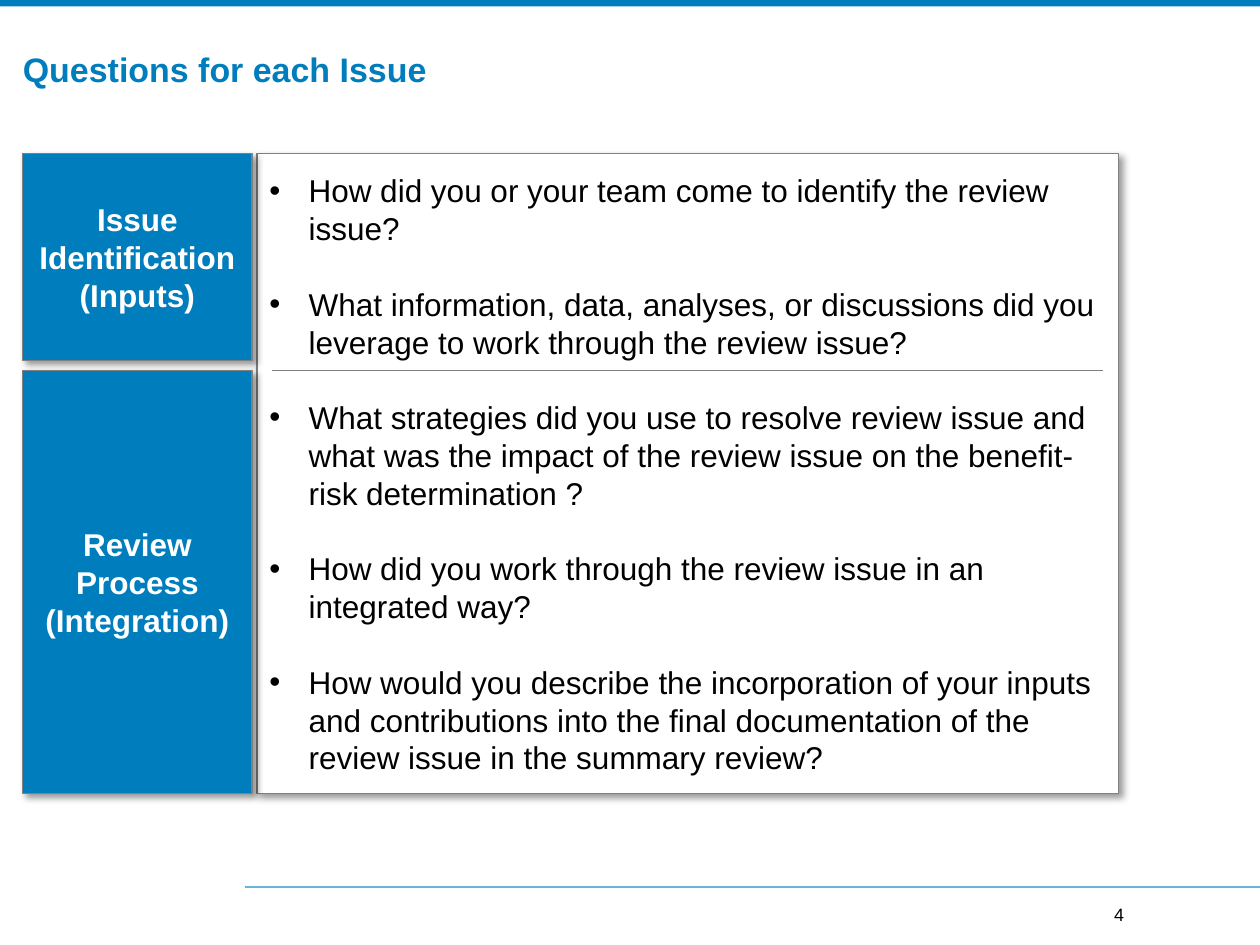
from dataclasses import dataclass

from lxml.etree import SubElement
from pptx import Presentation
from pptx.dml.color import RGBColor
from pptx.enum.shapes import MSO_CONNECTOR as Connector, MSO_SHAPE as Shape
from pptx.enum.text import MSO_ANCHOR as Anchor, MSO_AUTO_SIZE as AutoSize, PP_ALIGN as Align
from pptx.oxml.ns import qn
from pptx.util import Cm, Pt


@dataclass(frozen=True)
class Theme:
    font: str = "Arial"
    blue: str = "007DBC"
    pale_blue: str = "6BB4D8"
    gray: str = "808080"
    black: str = "000000"
    white: str = "FFFFFF"
    title_size: float = 19.4
    text_size: float = 18
    number_size: float = 10.2
    line_height: float = 21.6
    border: float = 0.75


THEME = Theme()
PAGE_WIDTH, PAGE_HEIGHT = 25.4, 19.05
LEFT, TOP, BOTTOM = 0.46, 3.1, 16
LABEL_WIDTH, PANEL_LEFT, PANEL_WIDTH = 4.62, 5.18, 17.37
DIVIDER_Y, LABEL_GAP, DIVIDER_INSET = 7.47, 0.2, 0.31

QUESTIONS = [
    "How did you or your team come to identify the review issue?",
    "What information, data, analyses, or discussions did you leverage to work through the review issue?",
    "What strategies did you use to resolve review issue and what was the impact of the review issue "
    "on the benefit-risk determination ?",
    "How did you work through the review issue in an integrated way?",
    "How would you describe the incorporation of your inputs and contributions into the final "
    "documentation of the review issue in the summary review?",
]


def color(value):
    return RGBColor.from_string(value)


def place(box, left, top, width, height):
    box.left, box.top, box.width, box.height = Cm(left), Cm(top), Cm(width), Cm(height)


def add_bullet(para, indent=0.79):
    properties = para._p.get_or_add_pPr()
    properties.set("marL", str(Cm(indent)))
    properties.set("indent", str(-Cm(indent)))
    SubElement(properties, qn("a:buFont"), typeface=THEME.font)
    SubElement(properties, qn("a:buChar"), char="•")


def write_text(box, paragraphs, size=THEME.text_size, ink=THEME.black, bold=False,
               align=Align.LEFT, margins=(0.25, 0.13), bullets=False, gap=0, leading=None):
    frame = box.text_frame
    frame.word_wrap = True
    frame.auto_size = AutoSize.NONE
    frame.vertical_anchor = Anchor.MIDDLE
    frame.margin_left = frame.margin_right = Cm(margins[0])
    frame.margin_top = frame.margin_bottom = Cm(margins[1])
    for index, text in enumerate(paragraphs):
        para = frame.add_paragraph() if index else frame.paragraphs[0]
        if bullets:
            add_bullet(para)
        para.alignment = align
        para.space_before = Pt(gap if index else 0)
        para.space_after = Pt(0)
        if leading:
            para.line_spacing = Pt(leading)
        span = para.add_run()
        span.text = text
        span.font.name = THEME.font
        span.font.size = Pt(size)
        span.font.bold = bold
        span.font.color.rgb = color(ink)


def fill_panel(box, fill):
    box.fill.solid()
    box.fill.fore_color.rgb = color(fill)
    box.line.color.rgb = color(THEME.gray)
    box.line.width = Pt(THEME.border)
    effects = SubElement(box._element.spPr, qn("a:effectLst"))
    shadow = SubElement(effects, qn("a:outerShdw"), blurRad=str(Pt(4)), dist=str(Pt(3)),
                        dir=str(45 * 60000), algn="tl", rotWithShape="0")
    tint = SubElement(shadow, qn("a:srgbClr"), val=THEME.black)
    SubElement(tint, qn("a:alpha"), val="40000")


def add_rectangle(page, left, top, width, height):
    return page.shapes.add_shape(Shape.RECTANGLE, Cm(left), Cm(top), Cm(width), Cm(height))


def add_bar(page):
    bar = add_rectangle(page, 0, 0, PAGE_WIDTH, 0.13)
    bar.fill.solid()
    bar.fill.fore_color.rgb = color(THEME.blue)
    bar.line.fill.background()
    bar.shadow.inherit = False


def add_label(page, paragraphs, top, bottom):
    label = add_rectangle(page, LEFT, top, LABEL_WIDTH, bottom - top)
    fill_panel(label, THEME.blue)
    write_text(label, paragraphs, ink=THEME.white, bold=True, align=Align.CENTER,
               leading=THEME.line_height)


def add_rule(page, start, end, y, ink, width):
    rule = page.shapes.add_connector(Connector.STRAIGHT, Cm(start), Cm(y), Cm(end), Cm(y))
    rule.line.color.rgb = color(ink)
    rule.line.width = Pt(width)
    SubElement(rule._element.spPr, qn("a:effectLst"))


def add_page_number(page, number):
    box = page.shapes.add_textbox(Cm(22.2), Cm(18.21), Cm(0.46), Cm(0.46))
    write_text(box, [number], size=THEME.number_size, align=Align.RIGHT, margins=(0, 0))


def main():
    deck = Presentation()
    deck.slide_width, deck.slide_height = Cm(PAGE_WIDTH), Cm(PAGE_HEIGHT)
    page = deck.slides.add_slide(deck.slide_layouts[1])
    title, panel = page.placeholders

    place(title, LEFT, 0.97, 23.01, 0.84)
    write_text(title, ["Questions for each Issue"], size=THEME.title_size, ink=THEME.blue,
               bold=True, margins=(0, 0))

    place(panel, PANEL_LEFT, TOP, PANEL_WIDTH, BOTTOM - TOP)
    fill_panel(panel, THEME.white)
    write_text(panel, QUESTIONS, bullets=True, gap=THEME.line_height, leading=THEME.line_height)

    add_label(page, ["Issue", "Identification", "(Inputs)"], TOP, DIVIDER_Y - LABEL_GAP)
    add_label(page, ["Review Process (Integration)"], DIVIDER_Y, BOTTOM)
    add_rule(page, PANEL_LEFT + DIVIDER_INSET, PANEL_LEFT + PANEL_WIDTH - DIVIDER_INSET,
             DIVIDER_Y, THEME.gray, THEME.border)

    add_bar(page)
    add_rule(page, 4.93, PAGE_WIDTH, 17.88, THEME.pale_blue, 1.3)
    add_page_number(page, "4")
    deck.save("out.pptx")


if __name__ == "__main__":
    main()
